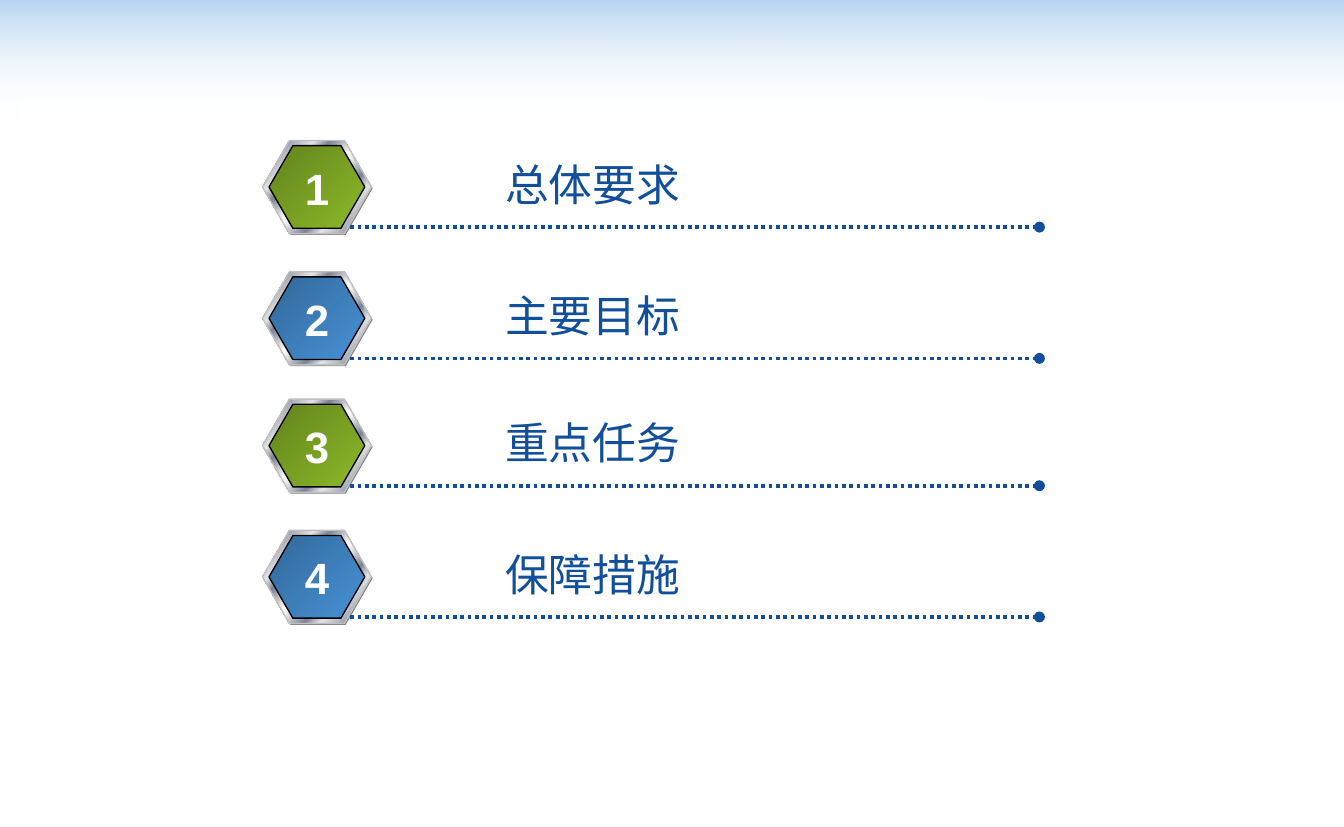
"""Build an agenda slide with four numbered hexagons and dotted rules."""
from dataclasses import dataclass

import lxml.etree
import pptx
import pptx.dml.color
import pptx.enum.dml
import pptx.enum.shapes
import pptx.enum.text
import pptx.oxml.ns
import pptx.presentation
import pptx.shapes.autoshape
import pptx.shapes.shapetree
import pptx.slide
import pptx.util

RGBColor = pptx.dml.color.RGBColor
MSO_SHAPE = pptx.enum.shapes.MSO_SHAPE
PP_ALIGN = pptx.enum.text.PP_ALIGN
qn = pptx.oxml.ns.qn

EMU_PER_PX = 9144

WHITE = RGBColor(0xFF, 0xFF, 0xFF)
BLACK = RGBColor(0x00, 0x00, 0x00)
NAVY = RGBColor(0x11, 0x4F, 0x9B)
BLUE = RGBColor(0x47, 0x92, 0xD7)
GREEN = RGBColor(0x8C, 0xB9, 0x29)
GREY = RGBColor(0x80, 0x80, 0x80)
SILVER = RGBColor(0xC0, 0xC0, 0xC0)
LIGHT_STEEL = RGBColor(0xE6, 0xE6, 0xE6)
DARK_STEEL = RGBColor(0x7D, 0x84, 0x96)


@dataclass(frozen=True)
class Box:
    left: int
    top: int
    width: int
    height: int


@dataclass(frozen=True)
class Stop:
    position: int
    color: RGBColor
    alpha: int = 100
    shade: int = 100


@dataclass(frozen=True)
class Item:
    number: int
    title: str
    top: int
    color: RGBColor


@dataclass(frozen=True)
class TextStyle:
    font: str
    color: RGBColor
    bold: bool
    align: PP_ALIGN


ITEMS = [
    Item(1, "总体要求", 107, GREEN),
    Item(2, "主要目标", 207, BLUE),
    Item(3, "重点任务", 304, GREEN),
    Item(4, "保障措施", 404, BLUE),
]
METAL = [
    Stop(position, color)
    for position, color in [
        (0, LIGHT_STEEL), (8, DARK_STEEL), (26, LIGHT_STEEL), (34, DARK_STEEL),
        (46, LIGHT_STEEL), (50, WHITE), (54, LIGHT_STEEL), (66, DARK_STEEL),
        (74, LIGHT_STEEL), (92, DARK_STEEL), (100, LIGHT_STEEL),
    ]
]
TITLE = TextStyle("Noto Sans CJK SC", NAVY, False, PP_ALIGN.LEFT)
DIGIT = TextStyle("Arial", WHITE, True, PP_ALIGN.CENTER)


def px(value: int) -> pptx.util.Emu:
    return pptx.util.Emu(value * EMU_PER_PX)


def place(box: Box) -> tuple[pptx.util.Emu, ...]:
    return px(box.left), px(box.top), px(box.width), px(box.height)


def set_gradient(sp: pptx.shapes.autoshape.Shape, stops: list[Stop], angle: int) -> None:
    sp.fill.solid()
    solid = sp._element.spPr.find(qn("a:solidFill"))
    grad = lxml.etree.Element(qn("a:gradFill"), rotWithShape="1")
    stop_list = lxml.etree.SubElement(grad, qn("a:gsLst"))
    for stop in stops:
        gs = lxml.etree.SubElement(stop_list, qn("a:gs"), pos=str(stop.position * 1000))
        color = lxml.etree.SubElement(gs, qn("a:srgbClr"), val=str(stop.color))
        for tag, percent in (("a:shade", stop.shade), ("a:alpha", stop.alpha)):
            if percent < 100:
                lxml.etree.SubElement(color, qn(tag), val=str(percent * 1000))
    lxml.etree.SubElement(grad, qn("a:lin"), ang=str(angle * 60000), scaled="1")
    sp._element.spPr.replace(solid, grad)


def add_shape(
    shapes: pptx.shapes.shapetree.GroupShapes,
    kind: MSO_SHAPE,
    box: Box,
    fill: RGBColor | list[Stop],
    line: RGBColor | None = None,
    weight: float = 0.75,
    angle: int = 45,
) -> None:
    sp = shapes.add_shape(kind, *place(box))
    sp.shadow.inherit = False
    if kind == MSO_SHAPE.HEXAGON:
        sp.adjustments[0] = 0.289
    if isinstance(fill, list):
        set_gradient(sp, fill, angle)
    else:
        sp.fill.solid()
        sp.fill.fore_color.rgb = fill
    if line is None:
        sp.line.fill.background()
    else:
        sp.line.color.rgb = line
        sp.line.width = pptx.util.Pt(weight)


def add_text(
    shapes: pptx.shapes.shapetree.GroupShapes, text: str, box: Box, style: TextStyle
) -> None:
    tf = shapes.add_textbox(*place(box)).text_frame
    tf.word_wrap = False
    tf.auto_size = pptx.enum.text.MSO_AUTO_SIZE.SHAPE_TO_FIT_TEXT
    p = tf.paragraphs[0]
    p.text = text
    p.alignment = style.align
    r = p.runs[0]
    r.font.name = style.font
    r.font.size = pptx.util.Pt(24)
    r.font.bold = style.bold
    r.font.color.rgb = style.color
    lxml.etree.SubElement(r.font._element, qn("a:ea"), typeface=style.font)


def add_rule(
    shapes: pptx.shapes.shapetree.GroupShapes, left: int, right: int, y: int
) -> None:
    rule = shapes.add_connector(
        pptx.enum.shapes.MSO_CONNECTOR.STRAIGHT, px(left), px(y), px(right), px(y)
    )
    rule.line.color.rgb = NAVY
    rule.line.width = pptx.util.Pt(2)
    rule.line.dash_style = pptx.enum.dml.MSO_LINE.ROUND_DOT
    sp_pr = rule._element.spPr
    lxml.etree.SubElement(sp_pr.find(qn("a:ln")), qn("a:tailEnd"), type="oval")
    lxml.etree.SubElement(sp_pr, qn("a:effectLst"))


def add_item(s: pptx.slide.Slide, item: Item) -> None:
    shapes = s.shapes.add_group_shape().shapes
    top = item.top
    face = [Stop(0, item.color, shade=46), Stop(100, item.color)]
    add_shape(shapes, MSO_SHAPE.HEXAGON, Box(201, top + 1, 83, 71), GREY)
    add_shape(shapes, MSO_SHAPE.HEXAGON, Box(200, top, 83, 71), METAL, SILVER)
    add_shape(shapes, MSO_SHAPE.HEXAGON, Box(205, top + 4, 73, 63), face, BLACK)
    add_rule(shapes, 267, 792, top + 66)
    add_text(shapes, item.title, Box(375, top + 8, 153, 50), TITLE)
    add_text(shapes, str(item.number), Box(222, top + 11, 39, 50), DIGIT)


def build() -> pptx.presentation.Presentation:
    prs = pptx.Presentation()
    prs.slide_width, prs.slide_height = px(1024), px(630)
    s = prs.slides.add_slide(prs.slide_layouts[6])
    sky = [Stop(0, BLUE, alpha=40), Stop(100, WHITE, alpha=0)]
    add_shape(s.shapes, MSO_SHAPE.RECTANGLE, Box(0, 0, 1024, 91), sky, angle=90)
    add_shape(s.shapes, MSO_SHAPE.ROUNDED_RECTANGLE, Box(17, 78, 737, 24), WHITE, WHITE, 2)
    for item in ITEMS:
        add_item(s, item)
    return prs


if __name__ == "__main__":
    build().save("out.pptx")
